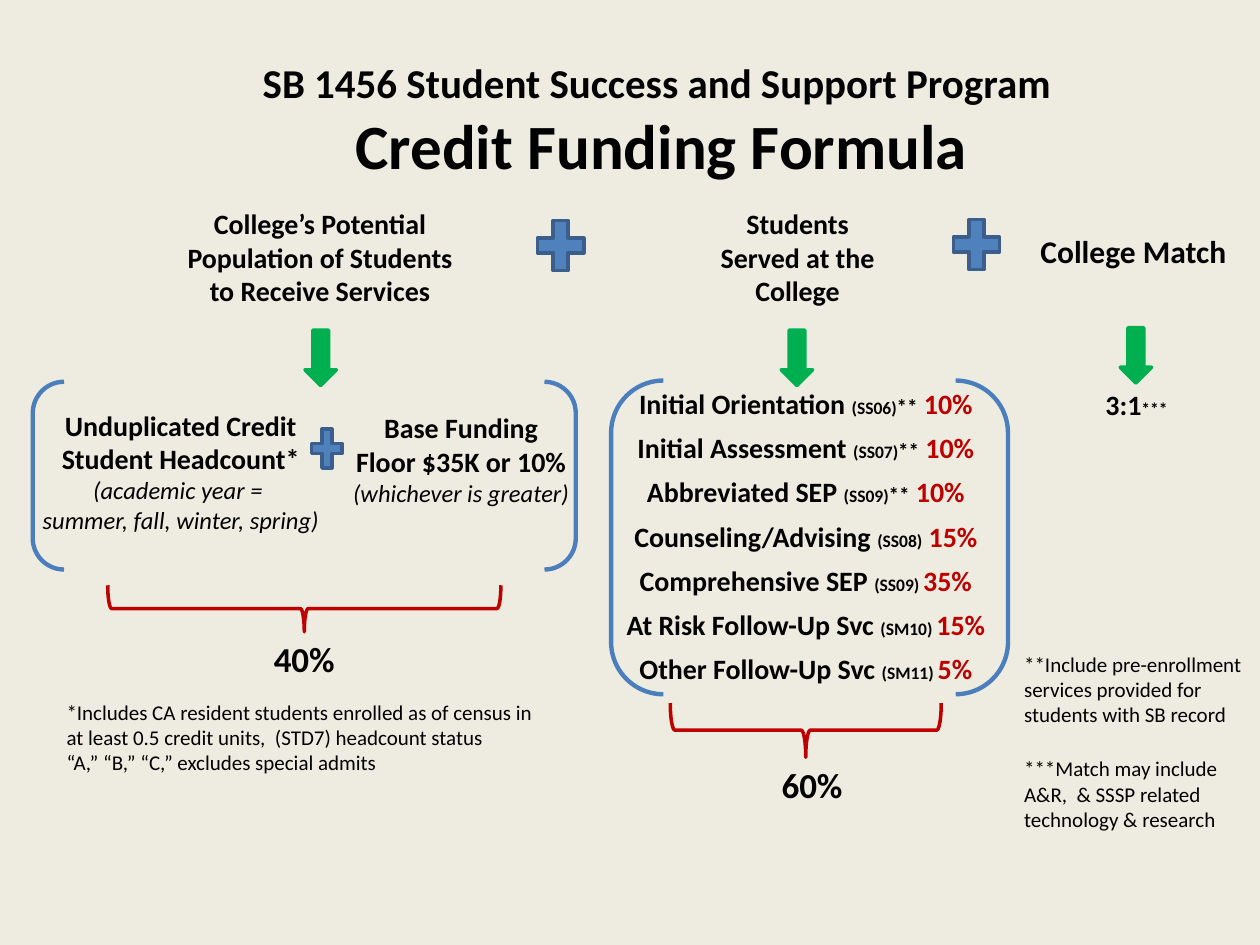
from pptx import Presentation
from pptx.dml.color import RGBColor
from pptx.enum.shapes import MSO_SHAPE
from pptx.enum.text import MSO_ANCHOR, MSO_AUTO_SIZE, PP_ALIGN
from pptx.util import Inches, Pt

BLACK, RED, GREEN = "000000", "C00000", "00B050"
BLUE, DARK_BLUE, BRACKET_BLUE = "4F81BD", "3A5F8C", "4B7EBC"

SERVICES = [
    ("Initial Orientation ", "(SS06)", "**", " ", "10%"),
    ("Initial Assessment ", "(SS07)", "**", " ", "10%"),
    ("Abbreviated SEP ", "(SS09)", "**", " ", "10%"),
    ("Counseling/Advising ", "(SS08)", "", " ", "15%"),
    ("Comprehensive SEP ", "(SS09) ", "", "", "35%"),
    ("At Risk Follow-Up Svc ", "(SM10) ", "", "", "15%"),
    ("Other Follow-Up Svc ", "(SM11) ", "", "", "5%"),
]


def color(value):
    return RGBColor.from_string(value)


def format_span(span, size, bold=True, italic=False, fill=BLACK):
    font = span.font
    font.name = "Calibri"
    font.size = Pt(size)
    font.bold = bold
    font.italic = italic
    font.color.rgb = color(fill)


def add_box(page, left, top, width, height, wrap=True):
    box = page.shapes.add_textbox(
        Inches(left), Inches(top), Inches(width), Inches(height))
    box.text_frame.word_wrap = wrap
    box.text_frame.auto_size = MSO_AUTO_SIZE.SHAPE_TO_FIT_TEXT
    return box


def add_title(page):
    box = add_box(page, 1, 0.41, 8.5, 1.08)
    frame = box.text_frame
    frame.auto_size = MSO_AUTO_SIZE.NONE
    frame.vertical_anchor = MSO_ANCHOR.MIDDLE
    para = frame.paragraphs[0]
    para.text = "SB 1456 Student Success and Support Program \vCredit Funding Formula"
    para.alignment = PP_ALIGN.CENTER
    for span, size in zip(para.runs, (23.4, 36)):
        format_span(span, size)


def add_text(page, place, text, size, bold=True, wrap=True,
             align=PP_ALIGN.CENTER, detail_from=None):
    frame = add_box(page, *place, wrap=wrap).text_frame
    frame.text = text
    for index, para in enumerate(frame.paragraphs):
        para.alignment = align
        detail = detail_from is not None and index >= detail_from
        for span in para.runs:
            format_span(span, 14 if detail else size, bold and not detail, detail)


def add_spans(para, spans):
    para.alignment = PP_ALIGN.CENTER
    for text, size, fill in spans:
        if text:
            span = para.add_run()
            span.text = text
            format_span(span, size, fill=fill)


def add_services(page):
    frame = add_box(page, 4.82, 3.02, 3.15, 2.49, wrap=False).text_frame
    for index, (name, code, mark, gap, share) in enumerate(SERVICES):
        para = frame.add_paragraph() if index else frame.paragraphs[0]
        para.space_after = Pt(6)
        add_spans(para, [(name, 16, BLACK), (code, 10, BLACK), (mark, 12, BLACK),
                         (gap, 16, BLACK), (share, 16, RED)])


def add_figure(page, kind, place, line, weight=2, fill=None, rotation=0):
    figure = page.shapes.add_shape(kind, *(Inches(length) for length in place))
    figure.shadow.inherit = False
    figure.rotation = rotation
    figure.line.color.rgb = color(line)
    figure.line.width = Pt(weight)
    if fill:
        figure.fill.solid()
        figure.fill.fore_color.rgb = color(fill)
    else:
        figure.fill.background()


def add_share(page, brace_place, label_place, label):
    add_figure(page, MSO_SHAPE.LEFT_BRACE, brace_place, RED, rotation=270)
    add_text(page, label_place, label, 20, wrap=False)


def main():
    deck = Presentation()
    deck.slide_width, deck.slide_height = Inches(10), Inches(7.5)
    page = deck.slides.add_slide(deck.slide_layouts[6])
    page.background.fill.solid()
    page.background.fill.fore_color.rgb = color("EEECE1")

    add_title(page)
    add_text(page, (1.33, 1.59, 2.42, 0.91),
             "College’s Potential Population of Students to Receive Services", 16)
    add_text(page, (5.62, 1.59, 1.42, 0.91), "Students Served at the College", 16)
    add_text(page, (8.15, 1.79, 1.69, 0.71), "College Match", 18, wrap=False)

    for place in ((4.2, 1.68, 0.5, 0.54), (7.5, 1.67, 0.5, 0.54),
                  (2.43, 3.35, 0.33, 0.42)):
        add_figure(page, MSO_SHAPE.MATH_PLUS, place, DARK_BLUE, fill=BLUE)
    for left, top in ((2.42, 2.62), (6.2, 2.62), (8.89, 2.6)):
        add_figure(page, MSO_SHAPE.DOWN_ARROW, (left, top, 0.25, 0.44),
                   GREEN, fill=GREEN)
    for place in ((0.26, 3.03, 4.31, 1.49), (4.85, 3.02, 3.15, 2.49)):
        add_figure(page, MSO_SHAPE.DOUBLE_BRACKET, place, BRACKET_BLUE, weight=2.5)

    add_text(page, (0.1, 3.19, 2.67, 1.11),
             "Unduplicated Credit Student Headcount*\n"
             "(academic year = \nsummer, fall, winter, spring)", 16, detail_from=1)
    add_text(page, (2.66, 3.21, 2, 0.88),
             "Base Funding\nFloor $35K or 10%\n(whichever is greater)",
             16, detail_from=2)
    add_services(page)
    ratio = add_box(page, 8.67, 3.03, 0.7, 0.37, wrap=False)
    add_spans(ratio.text_frame.paragraphs[0], [("3:1", 16, BLACK), ("***", 10, BLACK)])

    add_share(page, (2.23, 3.27, 0.37, 3.12), (2.07, 5.01, 0.69, 0.44), "40%")
    add_share(page, (6.18, 4.72, 0.43, 2.15), (6.1, 6.01, 0.69, 0.44), "60%")

    notes = [
        ((0.43, 5.5, 3.94, 0.71),
         "*Includes CA resident students enrolled as of census in at least 0.5 "
         "credit units,  (STD7) headcount status\n"
         "“A,” “B,” “C,” excludes special admits"),
        ((8.03, 5.12, 2.16, 0.71),
         "**Include pre-enrollment services provided for students with SB record"),
        ((8.03, 5.95, 1.8, 0.71),
         "***Match may include A&R,  & SSSP related technology & research"),
    ]
    for place, text in notes:
        add_text(page, place, text, 12, bold=False, align=PP_ALIGN.LEFT)

    deck.save("out.pptx")


if __name__ == "__main__":
    main()
